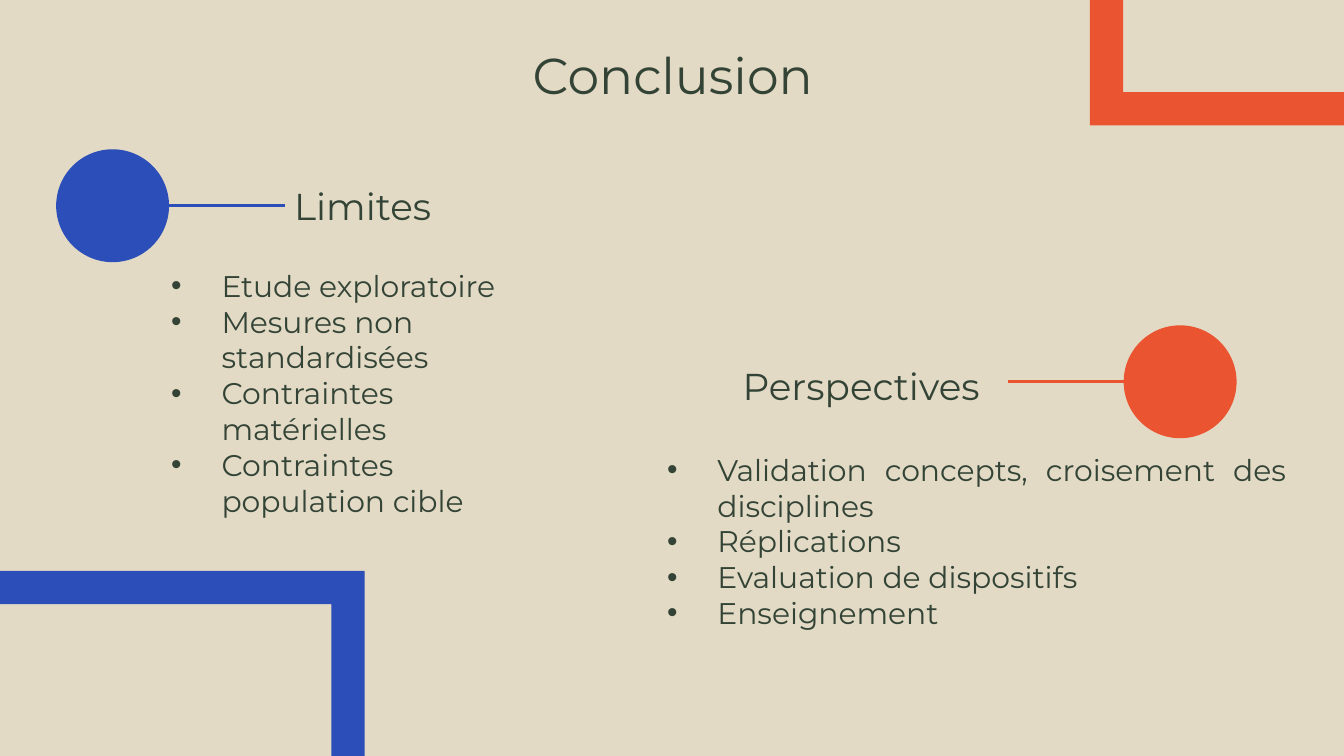
import pptx
import pptx.dml.color
import pptx.enum.shapes
import pptx.enum.text
import pptx.oxml.ns
import pptx.util
from lxml import etree

Pt = pptx.util.Pt
qn = pptx.oxml.ns.qn
ALIGN = pptx.enum.text.PP_ALIGN
COLORS = {"background": "E3DAC5", "blue": "2C4EB8", "orange": "EA5430", "text": "334436"}
FONT = "Montserrat"


def rgb(name):
    return pptx.dml.color.RGBColor.from_string(COLORS[name])


def add_text(p, text, size=16, align=ALIGN.LEFT, indented=False, bullet=False):
    """Fill a paragraph with one formatted run."""
    p.alignment = align
    pPr = p._p.get_or_add_pPr()
    if indented:
        pPr.set("marL", str(Pt(36)))
        pPr.set("indent", str(-Pt(27)))
    if bullet:
        etree.SubElement(pPr, qn("a:buFont"), typeface="Arial")
        etree.SubElement(pPr, qn("a:buChar"), char="•")
    r = p.add_run()
    r.text = text
    r.font.name = FONT
    r.font.size = Pt(size)
    r.font.color.rgb = rgb("text")


class SlideBuilder:
    def __init__(self, prs):
        self.s = prs.slides.add_slide(prs.slide_layouts[6])
        fill = self.s.background.fill
        fill.solid()
        fill.fore_color.rgb = rgb("background")

    def paint(self, sp, color):
        sp.shadow.inherit = False
        sp.fill.solid()
        sp.fill.fore_color.rgb = rgb(color)
        sp.line.fill.background()

    def frame(self, x, y, color, w=293.9, h=315.5, band=17.8):
        """Hollow rectangle: outer outline, then inner one in reverse."""
        right, bottom = x + w, y + h
        outer = [(x, y), (right, y), (right, bottom), (x, bottom)]
        inner = [(x + band, y + band), (x + band, bottom - band),
                 (right - band, bottom - band), (right - band, y + band)]
        outer, inner = [[(Pt(a), Pt(b)) for a, b in ring] for ring in (outer, inner)]
        fb = self.s.shapes.build_freeform(*outer[0], scale=1.0)
        fb.add_line_segments(outer[1:], close=True)
        fb.move_to(*inner[0])
        fb.add_line_segments(inner[1:], close=True)
        self.paint(fb.convert_to_shape(), color)

    def text(self, x, y, w, h, lines, first_align=None, **style):
        tf = self.s.shapes.add_textbox(Pt(x), Pt(y), Pt(w), Pt(h)).text_frame
        tf.word_wrap = True
        tf.margin_left = tf.margin_right = tf.margin_top = tf.margin_bottom = Pt(7.2)
        for i, line in enumerate(lines):
            p = tf.add_paragraph() if i else tf.paragraphs[0]
            if i == 0 and first_align is not None:
                add_text(p, line, **{**style, "align": first_align})
            else:
                add_text(p, line, **style)

    def circle(self, x, y, color, size=60.5):
        sp = self.s.shapes.add_shape(pptx.enum.shapes.MSO_SHAPE.OVAL,
                                     Pt(x), Pt(y), Pt(size), Pt(size))
        self.paint(sp, color)

    def line(self, x1, x2, y, color):
        sp = self.s.shapes.add_connector(pptx.enum.shapes.MSO_CONNECTOR.STRAIGHT,
                                         Pt(x1), Pt(y), Pt(x2), Pt(y))
        sp.line.color.rgb = rgb(color)
        sp.line.width = Pt(1.5)
        etree.SubElement(sp._element.spPr, qn("a:effectLst"))


def main():
    prs = pptx.Presentation()
    prs.slide_width, prs.slide_height = Pt(720), Pt(405)
    slide = SlideBuilder(prs)

    # Corner frames, running past the slide edges
    slide.frame(583.9, -248.3, "orange")
    slide.frame(-98.6, 305.9, "blue")

    # Title
    slide.text(90, 16.6, 540.7, 47.5, ["Conclusion"], size=27, align=ALIGN.CENTER)

    # Section headings
    for x, y, heading in [(99.4, 90.7, "Limites"), (366.5, 187.2, "Perspectives")]:
        slide.text(x, y, 180.7, 34.6, [heading], size=20, align=ALIGN.CENTER, indented=True)

    # Bullet lists
    slide.text(75.6, 136.1, 229, 135.4,
               ["Etude exploratoire", "Mesures non standardisées",
                "Contraintes matérielles", "Contraintes population cible"],
               indented=True, bullet=True)
    slide.text(341.3, 234.7, 355, 131.8,
               ["Validation concepts, croisement des disciplines", "Réplications",
                "Evaluation de dispositifs", "Enseignement"],
               first_align=ALIGN.JUSTIFY, indented=True, bullet=True)

    # Circles with their lead lines
    for circle_x, circle_y, start, end, color in [(30.1, 80, 90.6, 152.6, "blue"),
                                                  (602, 174.3, 602, 540, "orange")]:
        slide.line(start, end, circle_y + 30.2, color)
        slide.circle(circle_x, circle_y, color)

    prs.save("out.pptx")


if __name__ == "__main__":
    main()
